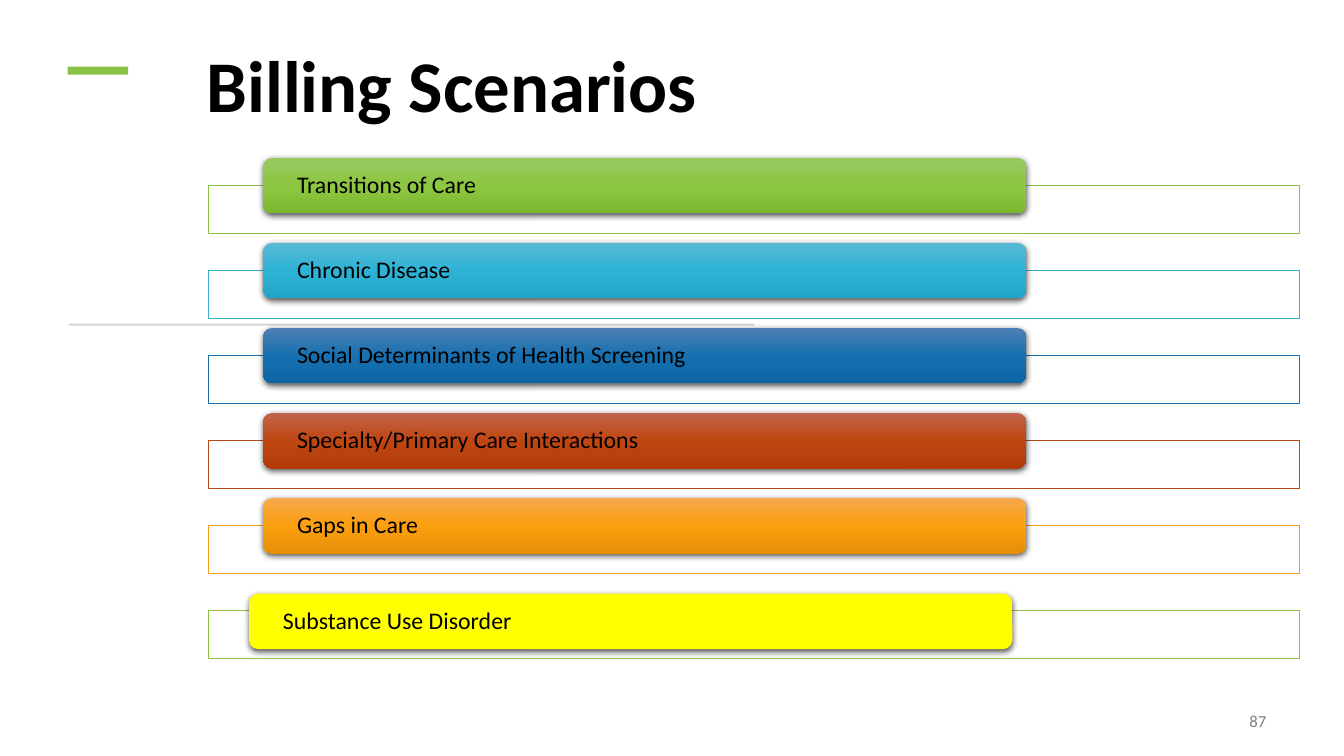
import dataclasses

import pptx
import pptx.dml.color
import pptx.enum.shapes
import pptx.enum.text
import pptx.oxml
import pptx.oxml.ns
import pptx.util

WIDE, HIGH = 13.33, 7.5
KIND = pptx.enum.shapes.MSO_SHAPE
ALIGN = pptx.enum.text.PP_ALIGN
ANCHOR = pptx.enum.text.MSO_ANCHOR
SPACE = pptx.oxml.ns.nsdecls("a")


@dataclasses.dataclass(frozen=True)
class Theme:
    font: str = "Calibri"
    title: int = 52
    label: int = 17
    small: int = 12
    ink: str = "000000"
    muted: str = "808080"
    accent: str = "8BC145"
    rule: str = "D5D5D5"
    paper: str = "FFFFFF"


THEME = Theme()

# Label, panel outline, bar colours from top to bottom
ROWS = [
    ("Transitions of Care", "8BC145", ["98C862", "8CC73F", "7DB831"]),
    ("Chronic Disease", "36AFCE", ["59B8D4", "2EB3D6", "21A4C6"]),
    ("Social Determinants of Health Screening", "1D6FA9",
     ["4E80B5", "1670B0", "0D65A3"]),
    ("Specialty/Primary Care Interactions", "B74919",
     ["C2634D", "BF4611", "B13B08"]),
    ("Gaps in Care", "F19D19", ["F5A84E", "FC9F0E", "E58F07"]),
    ("Substance Use Disorder", "8BC145", ["FFFF00"]),
]

# Row grid, in percent of the slide's width and height
PITCH = 11.25
PANEL = (15.53, 24.53, 81.17, 6.35)
BAR = (19.58, 20.88, 56.79, 7.35)
SHIFT = (-1.05, 1.4)  # the last bar sits a little left and lower


def color(code):
    return pptx.dml.color.RGBColor.from_string(code)


def place(left, top, wide, high):
    """Turn percent of the slide into lengths."""
    return [pptx.util.Inches(part * side / 100) for part, side in
            zip((left, top, wide, high), (WIDE, HIGH, WIDE, HIGH))]


def apply(item, style):
    for name, value in style.items():
        setattr(item, name, value)


def write(shape, text, size, ink, frame, para, bold=False):
    body = shape.text_frame
    body.text = text
    apply(body, {"word_wrap": True, **frame})
    line = body.paragraphs[0]
    apply(line, para)
    apply(line.font, {"name": THEME.font, "size": pptx.util.Pt(size),
                      "bold": bold})
    line.font.color.rgb = color(ink)


def block(slide, kind, area, fill=None):
    shape = slide.shapes.add_shape(kind, *place(*area))
    shape.shadow.inherit = False
    shape.line.fill.background()
    if fill:
        shape.fill.solid()
        shape.fill.fore_color.rgb = color(fill)
    return shape


def blend(shape, codes):
    """Fill with evenly spaced colours running downward."""
    step = 100000 // (len(codes) - 1)
    stops = "".join(
        f'<a:gs pos="{step * n}"><a:srgbClr val="{code}"/></a:gs>'
        for n, code in enumerate(codes))
    shape.fill.background()
    props = shape.element.spPr
    blank = props.find(pptx.oxml.ns.qn("a:noFill"))
    props.replace(blank, pptx.oxml.parse_xml(
        f'<a:gradFill {SPACE} rotWithShape="1"><a:gsLst>{stops}</a:gsLst>'
        '<a:lin ang="5400000" scaled="0"/></a:gradFill>'))


def shade(shape):
    """Add a soft shadow below the shape."""
    list_ = shape.element.spPr.find(pptx.oxml.ns.qn("a:effectLst"))
    list_.append(pptx.oxml.parse_xml(
        f'<a:outerShdw {SPACE} blurRad="57150" dist="19050" dir="5400000" '
        'algn="ctr" rotWithShape="0"><a:srgbClr val="000000">'
        '<a:alpha val="63000"/></a:srgbClr></a:outerShdw>'))


def panel(slide, area, edge):
    shape = block(slide, KIND.RECTANGLE, area, THEME.paper)
    tint = shape.element.spPr.find(".//" + pptx.oxml.ns.qn("a:srgbClr"))
    tint.append(pptx.oxml.parse_xml(f'<a:alpha {SPACE} val="90000"/>'))
    shape.line.color.rgb = color(edge)
    shape.line.width = pptx.util.Pt(0.5)


def bar(slide, area, text, codes):
    if len(codes) > 1:
        shape = block(slide, KIND.ROUNDED_RECTANGLE, area)
        blend(shape, codes)
    else:
        shape = block(slide, KIND.ROUNDED_RECTANGLE, area, codes[0])
    shade(shape)
    inset = pptx.util.Inches(0.31)
    write(shape, text, THEME.label, THEME.ink,
          {"vertical_anchor": ANCHOR.MIDDLE, "margin_left": inset,
           "margin_right": inset, "margin_top": 0, "margin_bottom": 0},
          {"alignment": ALIGN.LEFT, "line_spacing": 0.9})


def head(slide, text):
    title = slide.shapes.title
    apply(title, dict(zip(("left", "top", "width", "height"),
                          place(14.63, 4, 74.42, 13.6))))
    write(title, text, THEME.title, THEME.ink,
          {"vertical_anchor": ANCHOR.BOTTOM,
           "auto_size": pptx.enum.text.MSO_AUTO_SIZE.NONE},
          {"alignment": ALIGN.LEFT, "line_spacing": 0.9}, bold=True)


def main():
    deck = pptx.Presentation()
    apply(deck, {"slide_width": pptx.util.Inches(WIDE),
                 "slide_height": pptx.util.Inches(HIGH)})
    slide = deck.slides.add_slide(deck.slide_layouts[5])

    # Title, accent dash and rule
    head(slide, "Billing Scenarios")
    dash = block(slide, KIND.RECTANGLE, (6.98, 5.33, 0.6, 8), THEME.accent)
    dash.rotation = 90
    block(slide, KIND.RECTANGLE, (5.1, 42.8, 51.01, 0.27), THEME.rule)

    # Page number
    page = slide.shapes.add_textbox(*place(72.47, 92.67, 22.5, 5.33))
    write(page, "87", THEME.small, THEME.muted,
          {"vertical_anchor": ANCHOR.MIDDLE}, {"alignment": ALIGN.RIGHT})

    # Scenario rows
    for row, (text, edge, codes) in enumerate(ROWS):
        left, top, wide, high = PANEL
        panel(slide, (left, top + row * PITCH, wide, high), edge)
        left, top, wide, high = BAR
        over, down = SHIFT if row == len(ROWS) - 1 else (0, 0)
        bar(slide, (left + over, top + row * PITCH + down, wide, high),
            text, codes)

    deck.save("out.pptx")


if __name__ == "__main__":
    main()
